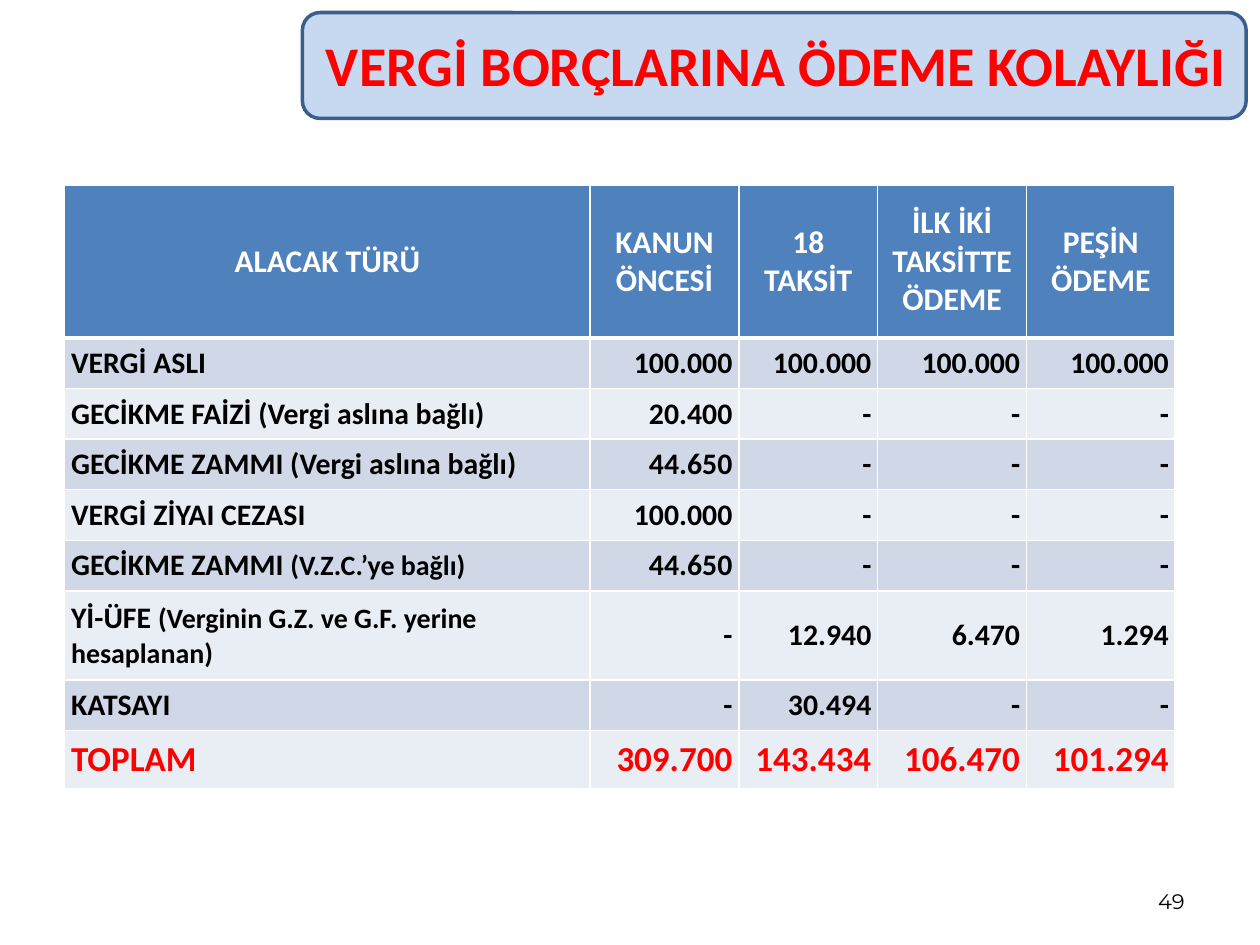
from dataclasses import dataclass

from pptx import Presentation, util as u
from pptx.dml.color import RGBColor
from pptx.enum import shapes, text
from pptx.oxml import parse_xml
from pptx.oxml.ns import nsdecls

LEFT, CENTER, RIGHT = text.PP_ALIGN.LEFT, text.PP_ALIGN.CENTER, text.PP_ALIGN.RIGHT


@dataclass
class Theme:
    font: str = "Calibri"
    number_font: str = "Montserrat"
    red: str = "FF0000"
    black: str = "000000"
    white: str = "FFFFFF"
    banner: str = "C6D9F1"
    banner_line: str = "3A5F8C"
    header: str = "4F81BD"
    bands: tuple = ("D0D8E8", "E9EDF4")
    title_size: int = 32
    total_size: int = 20
    header_size: int = 18
    body_size: int = 17
    note_size: int = 16
    page_size: int = 12


def rgb(value):
    return RGBColor.from_string(value)


def points(*values):
    return [u.Pt(value) for value in values]


def apply(target, values):
    for key, value in values.items():
        setattr(target, key, value)


class SlideBuilder:
    def __init__(self, slide, theme):
        self.slide, self.theme = slide, theme

    def add_runs(self, frame, runs, color, align, font=None, bold=True):
        """Fill the first paragraph with (text, size) runs."""
        paragraph = frame.paragraphs[0]
        paragraph.alignment = align
        for words, size in runs:
            run = paragraph.add_run()
            run.text = words
            apply(run.font, {"name": font or self.theme.font, "size": u.Pt(size), "bold": bold})
            run.font.color.rgb = rgb(color)

    def banner(self, box):
        banner = self.slide.shapes.add_shape(shapes.MSO_SHAPE.ROUNDED_RECTANGLE, *points(*box))
        banner.shadow.inherit = False
        banner.fill.solid()
        banner.fill.fore_color.rgb = rgb(self.theme.banner)
        banner.line.color.rgb = rgb(self.theme.banner_line)
        banner.line.width = u.Pt(2)
        return banner

    def title(self, words, box, behind):
        title = self.slide.shapes.title
        apply(title, dict(zip(("left", "top", "width", "height"), points(*box))))
        apply(title.text_frame, {"word_wrap": True, "vertical_anchor": text.MSO_ANCHOR.MIDDLE})
        self.add_runs(title.text_frame, [(words, self.theme.title_size)], self.theme.red, CENTER)
        behind.element.addnext(title.element)

    def page_number(self, number, box):
        frame = self.slide.shapes.add_textbox(*points(*box)).text_frame
        apply(frame, {"word_wrap": True, "vertical_anchor": text.MSO_ANCHOR.MIDDLE})
        self.add_runs(frame, [(number, self.theme.page_size)], self.theme.black, RIGHT,
                      self.theme.number_font, bold=False)

    def borders(self, cell, **widths):
        properties = cell._tc.get_or_add_tcPr()
        for side in "LRTB":
            properties.append(parse_xml(
                f'<a:ln{side} {nsdecls("a")} w="{u.Pt(widths.get(side, 1))}"><a:solidFill>'
                f'<a:srgbClr val="{self.theme.white}"/></a:solidFill></a:ln{side}>'))

    def cell(self, cell, runs, fill, color, align, **widths):
        self.borders(cell, **widths)
        cell.fill.solid()
        cell.fill.fore_color.rgb = rgb(fill)
        margin_x, margin_y = points(3.6, 2.9)
        apply(cell, {"margin_left": margin_x, "margin_right": margin_x,
                     "margin_top": margin_y, "margin_bottom": margin_y,
                     "vertical_anchor": text.MSO_ANCHOR.MIDDLE})
        self.add_runs(cell.text_frame, runs, color, align)

    def table(self, headings, rows, left, top, widths, heights):
        theme = self.theme
        table = self.slide.shapes.add_table(
            len(heights), len(widths),
            *points(left, top, sum(widths), sum(heights))).table
        for column, width in zip(table.columns, widths):
            column.width = u.Pt(width)
        for row, height in zip(table.rows, heights):
            row.height = u.Pt(height)

        # Heading row
        for c, heading in enumerate(headings):
            self.cell(table.cell(0, c), [(heading, theme.header_size)],
                      theme.header, theme.white, CENTER, B=3)

        # Banded rows, the last one holding the totals
        for r, (label, note, *amounts) in enumerate(rows, start=1):
            is_total = r == len(rows)
            size = theme.total_size if is_total else theme.body_size
            color = theme.red if is_total else theme.black
            label_runs = [(label, size)] + ([(note, theme.note_size)] if note else [])
            contents = [label_runs] + [[(amount, size)] for amount in amounts]
            for c, runs in enumerate(contents):
                self.cell(table.cell(r, c), runs, theme.bands[(r - 1) % 2], color,
                          RIGHT if c else LEFT, T=3 if r == 1 else 1)


HEADINGS = ["ALACAK TÜRÜ", "KANUN ÖNCESİ", "18 TAKSİT", "İLK İKİ TAKSİTTE ÖDEME", "PEŞİN ÖDEME"]

# Debt type, smaller note, then one amount per payment option
DEBTS = [
    ("VERGİ ASLI", "", "100.000", "100.000", "100.000", "100.000"),
    ("GECİKME FAİZİ (Vergi aslına bağlı)", "", "20.400", "-", "-", "-"),
    ("GECİKME ZAMMI (Vergi aslına bağlı)", "", "44.650", "-", "-", "-"),
    ("VERGİ ZİYAI CEZASI", "", "100.000", "-", "-", "-"),
    ("GECİKME ZAMMI ", "(V.Z.C.’ye bağlı)", "44.650", "-", "-", "-"),
    ("Yİ-ÜFE ", "(Verginin G.Z. ve G.F. yerine hesaplanan)", "-", "12.940", "6.470", "1.294"),
    ("KATSAYI", "", "-", "30.494", "-", "-"),
    ("TOPLAM", "", "309.700", "143.434", "106.470", "101.294"),
]


def main():
    deck = Presentation()
    deck.slide_width, deck.slide_height = points(720, 540)
    title_only = deck.slide_layouts[5]
    builder = SlideBuilder(deck.slides.add_slide(title_only), Theme())

    # Heading banner
    banner = builder.banner((172.8, 7.2, 539.3, 60.5))
    builder.title("VERGİ BORÇLARINA ÖDEME KOLAYLIĞI", (165.6, -11.5, 555.8, 96.5), banner)

    # Page number
    builder.page_number("49", (516.2, 500.4, 167.8, 28.8))

    # Payment comparison
    builder.table(HEADINGS, DEBTS, 37, 105.8, [300.2, 85, 79.4, 85, 85],
                  [87.4] + [28.9] * 5 + [51.1, 28.9, 33.1])

    deck.save("out.pptx")


if __name__ == "__main__":
    main()
